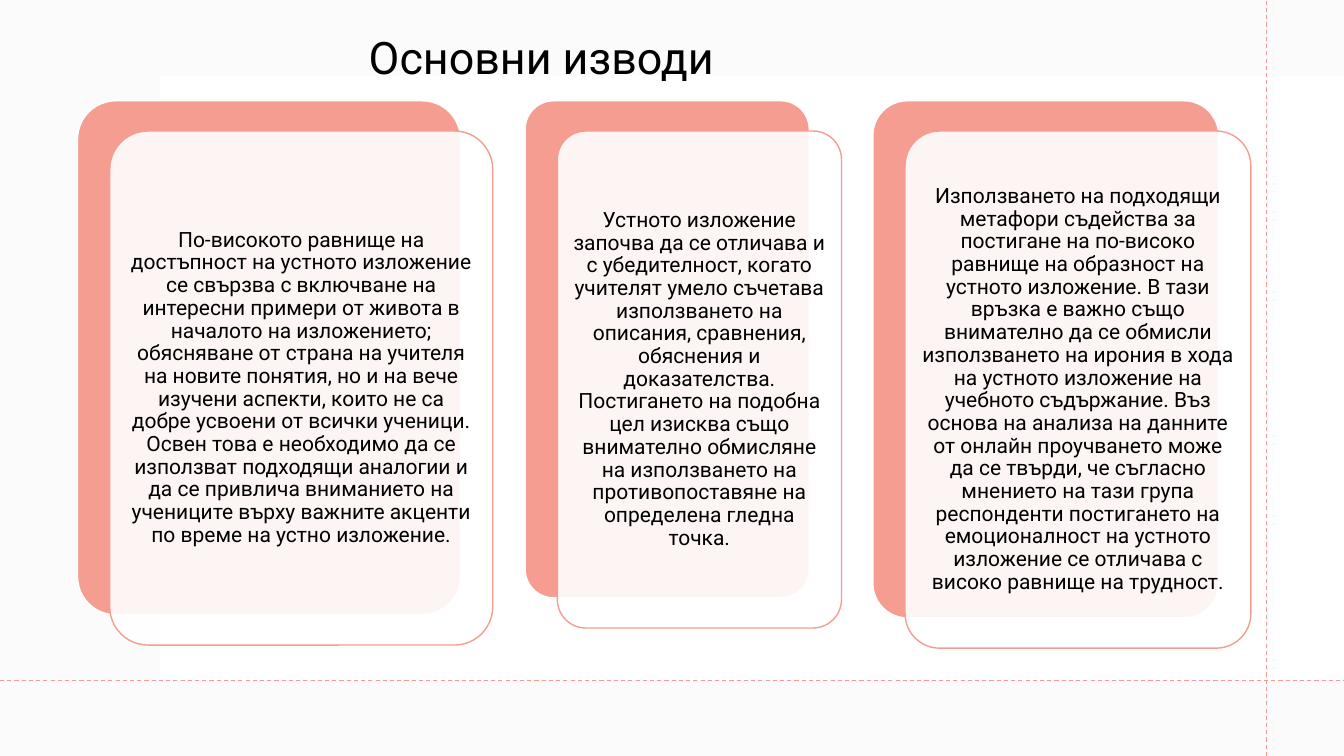
from lxml.etree import SubElement
from pptx import Presentation
from pptx.dml.color import RGBColor
from pptx.enum.dml import MSO_LINE
from pptx.enum.shapes import MSO_CONNECTOR, MSO_SHAPE
from pptx.enum.text import MSO_ANCHOR, PP_ALIGN
from pptx.oxml.ns import qn
from pptx.util import Pt

WIDE, HIGH = 960, 540
CORAL, WHITE, PALE, BLACK = "F49D90", "FFFFFF", "F4F4F4", "000000"
FONT = "Roboto"
ROUND = 0.1
SHIFT = 23, 21.6  # offset of the front card from the back card

CARDS = [
    ((55.4, 72, 273.6, 367.2),
     "По-високото равнище на достъпност на устното изложение се свързва с включване на "
     "интересни примери от живота в началото на изложението; обясняване от страна на "
     "учителя на новите понятия, но и на вече изучени аспекти, които не са добре усвоени "
     "от всички ученици. Освен това е необходимо да се използват подходящи аналогии и да "
     "се привлича вниманието на учениците върху важните акценти по време на устно "
     "изложение."),
    ((375.1, 72, 203, 355),
     "Устното изложение започва да се отличава и с убедителност, когато учителят умело "
     "съчетава използването на описания, сравнения, обяснения и доказателства. "
     "Постигането на подобна цел изисква също внимателно обмисляне на използването на "
     "противопоставяне на определена гледна точка."),
    ((623.5, 72, 247, 369.4),
     "Използването на подходящи метафори съдейства за постигане на по-високо равнище на "
     "образност на устното изложение. В тази връзка е важно също внимателно да се обмисли "
     "използването на ирония в хода на устното изложение на учебното съдържание. Въз "
     "основа на анализа на данните от онлайн проучването може да се твърди, че съгласно "
     "мнението на тази група респонденти постигането на емоционалност на устното "
     "изложение се отличава с високо равнище на трудност."),
]


def paint(form, color, alpha=None):
    """Set a solid colour, with alpha in percent, on a fill or font."""
    if hasattr(form, "solid"):
        form.solid()
        form.fore_color.rgb = RGBColor.from_string(color)
    else:
        form.color.rgb = RGBColor.from_string(color)
    if alpha is not None:
        tone = form._xPr.find(".//" + qn("a:srgbClr"))
        SubElement(tone, qn("a:alpha"), val=str(alpha * 1000))


def add_block(slide, box, color, alpha=None, edge=None, kind=MSO_SHAPE.RECTANGLE):
    shape = slide.shapes.add_shape(kind, *map(Pt, box))
    shape.shadow.inherit = False
    paint(shape.fill, color, alpha)
    if edge:
        paint(shape.line.fill, edge)
        shape.line.width = Pt(1)
    else:
        shape.line.fill.background()
    return shape


def add_dash(slide, *ends):
    line = slide.shapes.add_connector(MSO_CONNECTOR.STRAIGHT, *map(Pt, ends))
    paint(line.line.fill, CORAL)
    line.line.width = Pt(0.75)
    line.line.dash_style = MSO_LINE.DASH
    SubElement(line._element.spPr, qn("a:effectLst"))


def add_text(slide, box, text, size):
    frame = slide.shapes.add_textbox(*map(Pt, box)).text_frame
    frame.word_wrap = True
    para = frame.paragraphs[0]
    para.text = text
    para.font.name, para.font.size = FONT, Pt(size)
    paint(para.font, BLACK)
    return frame


def add_back(slide, box):
    left, top, wide, high = box
    add_block(slide, box, PALE, 35)
    add_block(slide, (left + 114, top + 54, wide - 114, high - 108), WHITE)
    add_dash(slide, left + 905, top + high, left + 905, top)
    add_dash(slide, left, top + 486, left + wide, top + 486)


def add_card(slide, box, text):
    left, top, wide, high = box
    front = left + SHIFT[0], top + SHIFT[1], wide, high
    for place, color, alpha, edge in (
        (box, CORAL, None, WHITE),
        (front, WHITE, 90, CORAL),
    ):
        card = add_block(slide, place, color, alpha, edge, MSO_SHAPE.ROUNDED_RECTANGLE)
        card.adjustments[0] = ROUND
    pad = 0.29 * ROUND * min(wide, high)  # keeps text clear of the round corners
    inner = front[0] + pad, front[1] + pad, wide - 2 * pad, high - 2 * pad
    frame = add_text(slide, inner, text, 15)
    frame.vertical_anchor = MSO_ANCHOR.MIDDLE
    frame.margin_left = frame.margin_right = Pt(4.5)
    frame.margin_top = frame.margin_bottom = Pt(4.5)
    para = frame.paragraphs[0]
    para.alignment = PP_ALIGN.CENTER
    para.line_spacing = 0.9


def main():
    deck = Presentation()
    deck.slide_width, deck.slide_height = Pt(WIDE), Pt(HIGH)
    slide = deck.slides.add_slide(deck.slide_layouts[6])
    add_back(slide, (0, 0, WIDE, HIGH))
    for box, text in CARDS:
        add_card(slide, box, text)
    add_text(slide, (256.3, 18, 480, 46), "Основни изводи", 32)
    deck.save("out.pptx")


if __name__ == "__main__":
    main()
